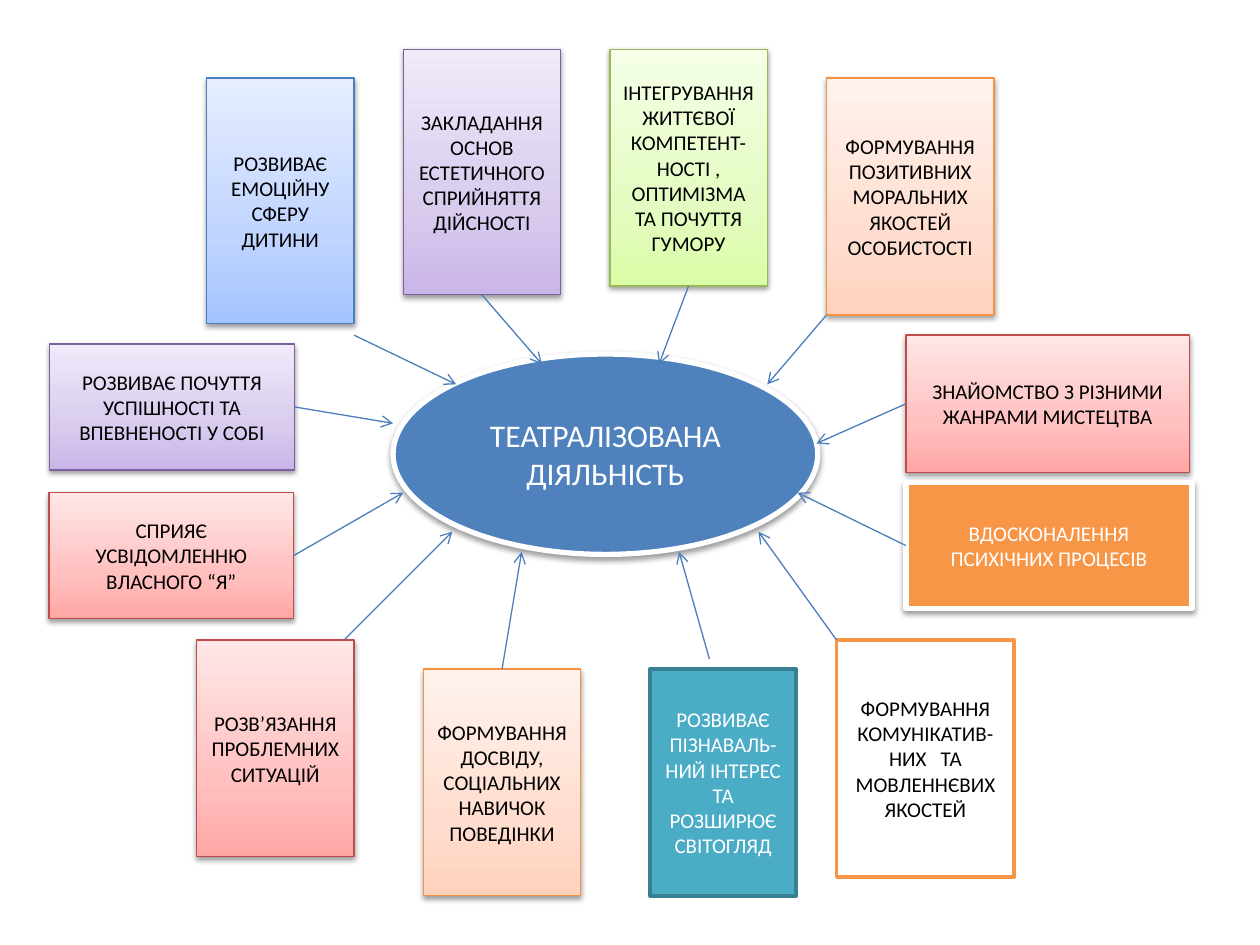
from copy import deepcopy
from dataclasses import dataclass

from lxml.etree import SubElement
from pptx import Presentation
from pptx.dml.color import RGBColor
from pptx.enum.shapes import MSO_CONNECTOR, MSO_SHAPE
from pptx.enum.text import MSO_ANCHOR, PP_ALIGN
from pptx.oxml.ns import qn
from pptx.util import Inches, Pt

TOP, LEFT, BOTTOM, RIGHT = range(4)


@dataclass
class Look:
    fills: tuple
    line: str
    line_width: float = 0.75
    text: str = "000000"
    shadow: bool = True


BLUE = Look(("A4C4FF", "BFD4FF", "E6EEFF"), "4B7EBC")
PURPLE = Look(("C9B5E8", "D8CBEE", "F0EAF9"), "7D60A0")
GREEN = Look(("DAFDA7", "E4FCC2", "F5FFE7"), "98B955")
PEACH = Look(("FFD2BD", "FFDED0", "FFF2ED"), "F69240")
PINK = Look(("FFA6A5", "FFC0BF", "FFE7E7"), "BF4C48")
ORANGE = Look(("F79646",), "FFFFFF", 3, "FFFFFF")
TEAL = Look(("4BACC6",), "377F92", 2, "FFFFFF", False)
OUTLINED = Look(("FFFFFF",), "F79646", 2, shadow=False)
CENTRE = Look(("4F81BD",), "FFFFFF", 3, "FFFFFF")

# Clockwise: text, look, (left, top, width, height), arrow start, arrow end.
# An arrow starts at a side of its box or at a free point.
TOPICS = [
    ("РОЗВИВАЄ ЕМОЦІЙНУ СФЕРУ ДИТИНИ", BLUE,
     (1.64, 0.62, 1.17, 1.95), (2.81, 2.66), (3.62, 3.05)),
    ("ЗАКЛАДАННЯ ОСНОВ ЕСТЕТИЧНОГО СПРИЙНЯТТЯ ДІЙСНОСТІ", PURPLE,
     (3.2, 0.39, 1.25, 1.95), BOTTOM, (4.3, 2.89)),
    ("ІНТЕГРУВАННЯ ЖИТТЄВОЇ КОМПЕТЕНТ-\nНОСТІ , ОПТИМІЗМА ТА ПОЧУТТЯ ГУМОРУ", GREEN,
     (4.84, 0.39, 1.25, 1.88), BOTTOM, (5.23, 2.89)),
    ("ФОРМУВАННЯ ПОЗИТИВНИХ МОРАЛЬНИХ ЯКОСТЕЙ ОСОБИСТОСТІ", PEACH,
     (6.56, 0.62, 1.33, 1.88), (6.56, 2.5), (6.09, 3.05)),
    ("ЗНАЙОМСТВО З РІЗНИМИ ЖАНРАМИ МИСТЕЦТВА", PINK,
     (7.19, 2.66, 2.25, 1.09), LEFT, (6.48, 3.52)),
    ("ВДОСКОНАЛЕННЯ ПСИХІЧНИХ ПРОЦЕСІВ", ORANGE,
     (7.19, 3.83, 2.27, 1), LEFT, (6.33, 3.91)),
    ("ФОРМУВАННЯ КОМУНІКАТИВ-\nНИХ   ТА МОВЛЕННЄВИХ ЯКОСТЕЙ", OUTLINED,
     (6.64, 5.08, 1.41, 1.88), (6.64, 5.08), (6.02, 4.22)),
    ("РОЗВИВАЄ ПІЗНАВАЛЬ-\nНИЙ ІНТЕРЕС ТА РОЗШИРЮЄ СВІТОГЛЯД", TEAL,
     (5.16, 5.31, 1.16, 1.8), (5.63, 5.23), (5.39, 4.38)),
    ("ФОРМУВАННЯ ДОСВІДУ, СОЦІАЛЬНИХ НАВИЧОК ПОВЕДІНКИ", PEACH,
     (3.36, 5.31, 1.25, 1.8), TOP, (4.14, 4.38)),
    ("РОЗВ’ЯЗАННЯ ПРОБЛЕМНИХ СИТУАЦІЙ", PINK,
     (1.56, 5.08, 1.25, 1.72), (2.73, 5.08), (3.59, 4.22)),
    ("СПРИЯЄ УСВІДОМЛЕННЮ ВЛАСНОГО “Я”", PINK,
     (0.39, 3.91, 1.94, 1), RIGHT, (3.2, 3.91)),
    ("РОЗВИВАЄ ПОЧУТТЯ УСПІШНОСТІ ТА ВПЕВНЕНОСТІ У СОБІ", PURPLE,
     (0.39, 2.73, 1.95, 1), RIGHT, (3.12, 3.36)),
]


def colour(value):
    return RGBColor.from_string(value)


class SlideBuilder:
    font = "Calibri"
    arrow_colour = "4B7EBC"

    def __init__(self, page):
        self.page = page

    def paint(self, box, fills):
        """Fill with one colour, or with three blended from the bottom up."""
        if len(fills) == 1:
            box.fill.solid()
            box.fill.fore_color.rgb = colour(fills[0])
            return
        box.fill.gradient()
        box.fill.gradient_angle = 90
        first = next(box._element.spPr.iter(qn("a:gs")))
        first.addnext(deepcopy(first))
        for stop, position, value in zip(box.fill.gradient_stops, (0, 0.35, 1), fills):
            stop.position = position
            stop.color.rgb = colour(value)

    def cast_shadow(self, box):
        effects = box._element.spPr.find(qn("a:effectLst"))
        shadow = SubElement(effects, qn("a:outerShdw"), blurRad="40000",
                            dist="20000", dir="5400000", rotWithShape="0")
        black = SubElement(shadow, qn("a:srgbClr"), val="000000")
        SubElement(black, qn("a:alpha"), val="38000")

    def box(self, kind, bounds, text, look, size=12):
        box = self.page.shapes.add_shape(kind, *map(Inches, bounds))
        self.paint(box, look.fills)
        box.line.color.rgb = colour(look.line)
        box.line.width = Pt(look.line_width)
        box.shadow.inherit = False
        if look.shadow:
            self.cast_shadow(box)
        frame = box.text_frame
        frame.word_wrap = True
        frame.vertical_anchor = MSO_ANCHOR.MIDDLE
        for index, line in enumerate(text.split("\n")):
            para = frame.add_paragraph() if index else frame.paragraphs[0]
            para.alignment = PP_ALIGN.CENTER
            span = para.add_run()
            span.text = line
            span.font.name = self.font
            span.font.size = Pt(size)
            span.font.color.rgb = colour(look.text)
        return box

    def arrow(self, box, start, end):
        """Draw an arrow from a side of the box, or from a free point."""
        joined = isinstance(start, int)
        begin = end if joined else start
        arrow = self.page.shapes.add_connector(
            MSO_CONNECTOR.STRAIGHT, *map(Inches, begin + end))
        if joined:
            arrow.begin_connect(box, start)
        arrow.line.color.rgb = colour(self.arrow_colour)
        arrow.line.width = Pt(0.75)
        properties = arrow._element.spPr
        SubElement(properties.find(qn("a:ln")), qn("a:tailEnd"), type="arrow")
        SubElement(properties, qn("a:effectLst"))


def main():
    deck = Presentation()
    deck.slide_width, deck.slide_height = Inches(10), Inches(7.5)
    builder = SlideBuilder(deck.slides.add_slide(deck.slide_layouts[6]))
    builder.box(MSO_SHAPE.OVAL, (3.12, 2.81, 3.37, 1.59),
                "ТЕАТРАЛІЗОВАНА ДІЯЛЬНІСТЬ", CENTRE, size=18)
    for text, look, bounds, start, end in TOPICS:
        box = builder.box(MSO_SHAPE.RECTANGLE, bounds, text, look)
        builder.arrow(box, start, end)
    deck.save("out.pptx")


if __name__ == "__main__":
    main()
